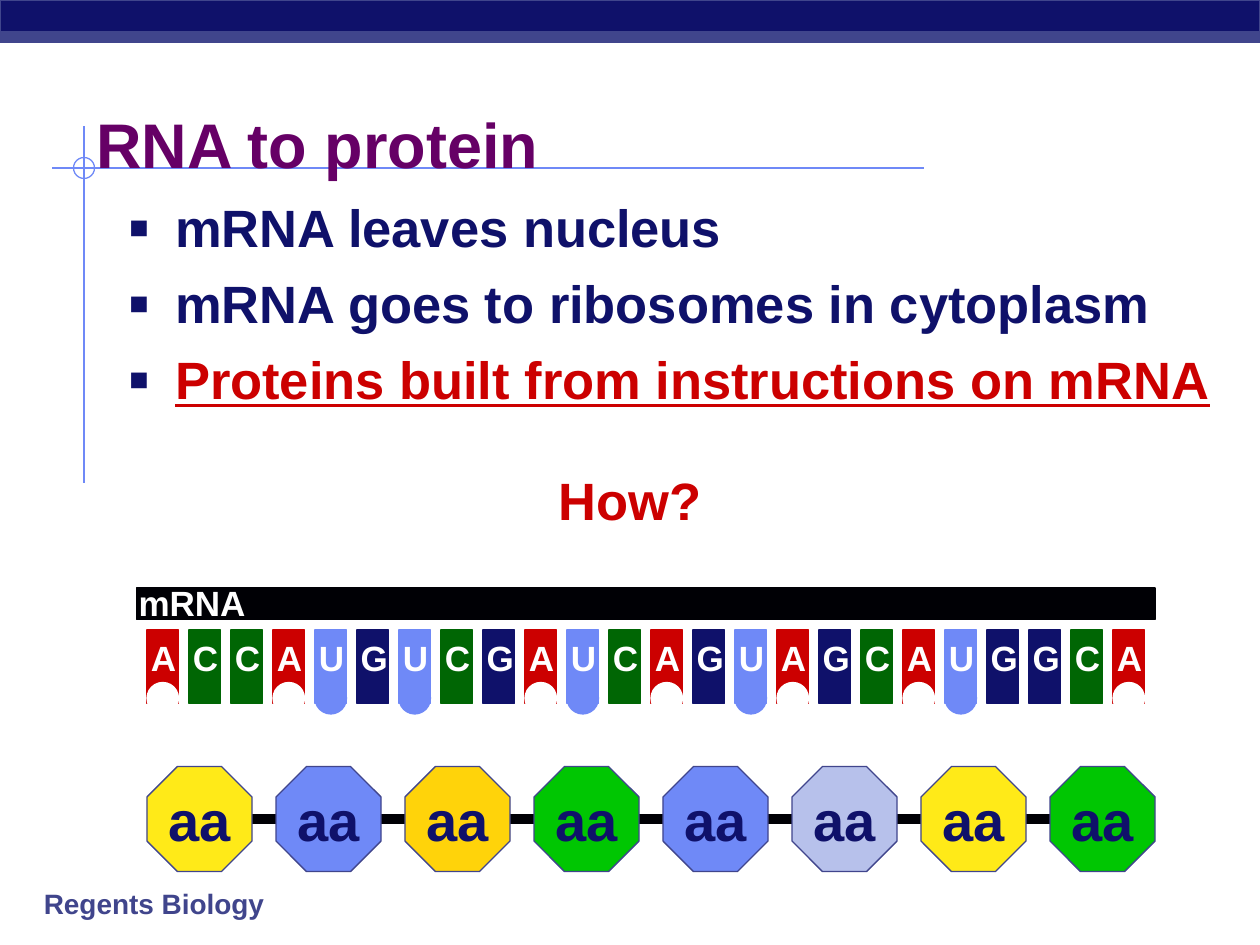
from dataclasses import dataclass

from lxml import etree
from pptx import Presentation
from pptx.dml.color import RGBColor
from pptx.enum.shapes import MSO_CONNECTOR, MSO_SHAPE
from pptx.enum.text import MSO_ANCHOR, PP_ALIGN
from pptx.oxml.ns import qn
from pptx.util import Pt

RECT, OVAL, OCTAGON = MSO_SHAPE.RECTANGLE, MSO_SHAPE.OVAL, MSO_SHAPE.OCTAGON
STRAIGHT = MSO_CONNECTOR.STRAIGHT
TOP, MIDDLE = MSO_ANCHOR.TOP, MSO_ANCHOR.MIDDLE
LEFT, CENTER = PP_ALIGN.LEFT, PP_ALIGN.CENTER


@dataclass(frozen=True)
class Theme:
    font: str = "Arial"
    navy: str = "0F116A"
    slate: str = "40458C"
    blue: str = "6F89F7"
    purple: str = "660066"
    red: str = "CC0000"
    dark_green: str = "006604"
    green: str = "00C602"
    yellow: str = "FFEA18"
    amber: str = "FFD30A"
    lilac: str = "B7C1EB"
    black: str = "000005"
    white: str = "FFFFFF"
    title: int = 36
    amino: int = 32
    body: int = 30
    base: int = 20
    footer: int = 16
    hairline: float = 0.75


class SlideBuilder:
    def __init__(self, slide, theme):
        self.s = slide
        self.theme = theme

    def line(self, x1, y1, x2, y2, color, width):
        cx = self.s.shapes.add_connector(STRAIGHT, Pt(x1), Pt(y1), Pt(x2), Pt(y2))
        cx.line.color.rgb = RGBColor.from_string(color)
        cx.line.width = Pt(width)
        etree.SubElement(cx._element.spPr, qn("a:effectLst"))

    def shape(self, kind, x, y, w, h, fill=None, line=None):
        sp = self.s.shapes.add_shape(kind, Pt(x), Pt(y), Pt(w), Pt(h))
        sp.shadow.inherit = False
        if fill:
            sp.fill.solid()
            sp.fill.fore_color.rgb = RGBColor.from_string(fill)
        else:
            sp.fill.background()
        sp.line.color.rgb = RGBColor.from_string(line or fill)
        sp.line.width = Pt(self.theme.hairline)
        return sp

    def run(self, p, text, size, color, align=LEFT, underline=None):
        p.alignment = align
        r = p.add_run()
        r.text = text
        font = {"name": self.theme.font, "size": Pt(size), "bold": True, "underline": underline}
        for name, value in font.items():
            setattr(r.font, name, value)
        r.font.color.rgb = RGBColor.from_string(color)

    def frame(self, sp, **values):
        for name, value in values.items():
            setattr(sp.text_frame, name, value)
        return sp.text_frame

    def text(self, x, y, w, h, text, size, color, align=LEFT, **values):
        sp = self.s.shapes.add_textbox(Pt(x), Pt(y), Pt(w), Pt(h))
        tf = self.frame(sp, **{"word_wrap": False, "vertical_anchor": MIDDLE, **values})
        self.run(tf.paragraphs[0], text, size, color, align)

    def bullets(self, x, y, w, h, items, indent, gap):
        sp = self.s.shapes.add_textbox(Pt(x), Pt(y), Pt(w), Pt(h))
        tf = self.frame(sp, word_wrap=True, vertical_anchor=TOP)
        for i, (text, color, underline) in enumerate(items):
            p = tf.add_paragraph() if i else tf.paragraphs[0]
            self.run(p, text, self.theme.body, color, underline=underline)
            p.space_before = Pt(gap)
            pPr = p._p.get_or_add_pPr()
            pPr.set("marL", str(Pt(indent)))
            pPr.set("indent", str(-Pt(indent)))
            clr = etree.SubElement(pPr, qn("a:buClr"))
            etree.SubElement(clr, qn("a:srgbClr"), val=self.theme.navy)
            etree.SubElement(pPr, qn("a:buSzPct"), val="120000")
            etree.SubElement(pPr, qn("a:buFont"), typeface=self.theme.font)
            etree.SubElement(pPr, qn("a:buChar"), char="▪")

    def base(self, letter, x, y):
        """A nucleotide: A has a notch at its foot, U a knob that fits it."""
        t = self.theme
        color = {"A": t.red, "C": t.dark_green, "G": t.navy, "U": t.blue}[letter]
        self.shape(RECT, x, y, 18, 42, color)
        foot = {"A": t.white, "U": t.blue}.get(letter)
        if foot:
            self.shape(OVAL, x, y + 30, 18, 18, foot)
        self.text(x - 5, y, 29, 31, letter, t.base, t.white, CENTER)

    def amino_acid(self, x, y, size, fill):
        t = self.theme
        sp = self.shape(OCTAGON, x, y, size, size, fill, t.slate)
        sp.adjustments[0] = 0.29
        tf = self.frame(sp, word_wrap=False, vertical_anchor=MIDDLE)
        self.run(tf.paragraphs[0], "aa", t.amino, t.navy, CENTER)


def main():
    prs = Presentation()
    prs.slide_width, prs.slide_height = Pt(720), Pt(540)
    t = Theme()
    b = SlideBuilder(prs.slides.add_slide(prs.slide_layouts[6]), t)

    # Frame: cross lines, top band, footer
    b.line(30, 96, 528, 96, t.blue, 1)
    b.line(48, 72, 48, 276, t.blue, 1)
    b.shape(OVAL, 42, 90, 12, 12, line=t.blue)
    b.shape(RECT, 0, 0, 720, 24, t.navy, t.slate)
    b.shape(RECT, 0, 18, 720, 6, t.slate)
    b.text(18, 502.5, 144, 27, "Regents Biology", t.footer, t.slate)

    # Title and points
    b.text(48, 54, 612, 60, "RNA to protein", t.title, t.purple,
           vertical_anchor=TOP, margin_top=Pt(6.5))
    b.bullets(66, 108, 654, 212, [
        ("mRNA leaves nucleus", t.navy, None),
        ("mRNA goes to ribosomes in cytoplasm", t.navy, None),
        ("Proteins built from instructions on mRNA", t.red, True),
    ], indent=27, gap=7.5)
    b.text(312, 264, 96, 43, "How?", t.body, t.red, CENTER)

    # mRNA strand with its bases
    b.shape(RECT, 78, 336, 582, 18, t.black)
    b.text(72, 329, 75.5, 31, "mRNA", t.base, t.white, CENTER)
    for i, letter in enumerate("ACCAUGUCGAUCAGUAGCAUGGCA"):
        b.base(letter, 84 + 24 * i, 360)

    # Amino acid chain
    b.line(108, 468, 642, 468, t.black, 6)
    chain = [t.yellow, t.blue, t.amber, t.green, t.blue, t.lilac, t.yellow, t.green]
    left, right, size = 84, 660, 60
    pitch = (right - left - size) / (len(chain) - 1)
    for i, fill in enumerate(chain):
        b.amino_acid(left + pitch * i, 438, size, fill)

    prs.save("out.pptx")


if __name__ == "__main__":
    main()
